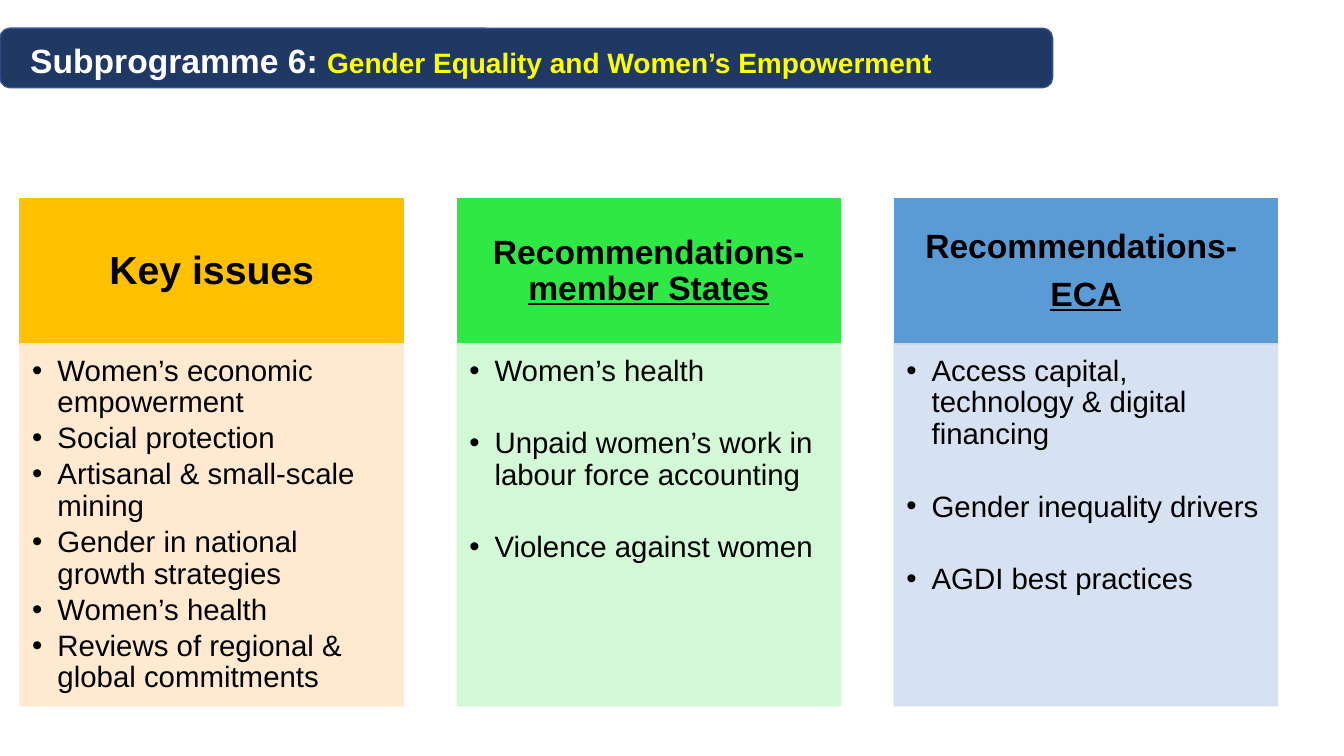
from pptx import Presentation
from pptx.dml.color import RGBColor
from pptx.enum.shapes import MSO_SHAPE
from pptx.enum.text import MSO_ANCHOR, MSO_AUTO_SIZE, PP_ALIGN
from pptx.oxml.ns import qn
from pptx.util import Inches, Pt
from lxml import etree

RECT = MSO_SHAPE.RECTANGLE
ROUND = MSO_SHAPE.ROUNDED_RECTANGLE
TOP, MIDDLE = MSO_ANCHOR.TOP, MSO_ANCHOR.MIDDLE
LEFT, CENTER = PP_ALIGN.LEFT, PP_ALIGN.CENTER
FIXED = MSO_AUTO_SIZE.NONE

COLORS = {
    "navy": "203864", "edge": "325491", "white": "FFFFFF",
    "yellow": "FFFF00", "black": "000000",
    "gold": "FFC000", "cream": "FFE8CC",
    "green": "30E845", "mint": "CFF8D1",
    "blue": "5B9BD5", "sky": "D2DFF0",
}

COLUMNS = [
    ("gold", "cream", 28, (0.22, 0.12), [[("Key issues", False)]], 3,
     ["Women’s economic empowerment", "Social protection",
      "Artisanal & small-scale mining",
      "Gender in national growth strategies", "Women’s health",
      "Reviews of regional & global commitments"]),
    ("green", "mint", 24, (0.19, 0.11),
     [[("Recommendations- ", False), ("member States", True)]], 29,
     ["Women’s health", "Unpaid women’s work in labour force accounting",
      "Violence against women"]),
    ("blue", "sky", 24, (0.19, 0.11),
     [[("Recommendations- ", False)], [("ECA", True)]], 29,
     ["Access capital, technology & digital financing",
      "Gender inequality drivers", "AGDI best practices"]),
]


def color(name):
    return RGBColor.from_string(COLORS[name])


def add_box(slide, kind, area, fill, line):
    box = slide.shapes.add_shape(kind, *map(Inches, area))
    box.shadow.inherit = False
    box.fill.solid()
    box.fill.fore_color.rgb = color(fill)
    box.line.color.rgb = color(line)
    box.line.width = Pt(1)
    return box


def set_frame(shape, pads, anchor):
    frame = shape.text_frame
    frame.word_wrap = True
    frame.auto_size = FIXED
    frame.vertical_anchor = anchor
    (frame.margin_left, frame.margin_top,
     frame.margin_right, frame.margin_bottom) = map(Inches, pads)
    return frame


def add_para(frame, index, align, after):
    para = frame.add_paragraph() if index else frame.paragraphs[0]
    para.alignment = align
    para.line_spacing = 0.9
    para.space_before = Pt(0)
    para.space_after = Pt(after)
    return para


def add_run(para, text, size, ink="black", bold=False, under=False):
    run = para.add_run()
    run.text = text
    font = run.font
    font.name = "Arial"
    font.size = Pt(size)
    font.bold = bold
    font.underline = under
    font.color.rgb = color(ink)


def add_bullet(para):
    props = para._p.get_or_add_pPr()
    props.set("marL", str(Inches(0.25)))
    props.set("indent", str(Inches(-0.25)))
    etree.SubElement(props, qn("a:buFont")).set("typeface", "Arial")
    etree.SubElement(props, qn("a:buChar")).set("char", "•")


def fade(shape, share):
    for tint in shape.element.spPr.iter(qn("a:srgbClr")):
        etree.SubElement(tint, qn("a:alpha")).set("val", str(share * 1000))


def add_title(slide):
    title = slide.shapes.title
    bar = add_box(slide, ROUND, (0, 0.28, 10.44, 0.59), "navy", "edge")
    title.element.addprevious(bar.element)
    title.left, title.top = Inches(0.2), Inches(0.35)
    title.width, title.height = Inches(10.29), Inches(0.5)
    frame = set_frame(title, (0.1, 0.05, 0.1, 0.05), TOP)
    para = frame.paragraphs[0]
    para.alignment = LEFT
    add_run(para, "Subprogramme 6: ", 24, "white", True)
    add_run(para, "Gender Equality and Women’s Empowerment", 20, "yellow", True)


def add_head(slide, left, fill, size, pads, lines):
    box = add_box(slide, RECT, (left, 1.97, 3.8, 1.45), fill, fill)
    frame = set_frame(box, pads * 2, MIDDLE)
    for index, runs in enumerate(lines):
        para = add_para(frame, index, CENTER, size * 0.35)
        for text, under in runs:
            add_run(para, text, size, bold=True, under=under)


def add_list(slide, left, fill, after, items):
    box = add_box(slide, RECT, (left, 3.41, 3.8, 3.59), fill, fill)
    fade(box, 90)
    frame = set_frame(box, (0.12, 0.12, 0.16, 0.18), TOP)
    for index, item in enumerate(items):
        para = add_para(frame, index, LEFT, after)
        add_bullet(para)
        add_run(para, item, 21)


def main():
    deck = Presentation()
    deck.slide_width, deck.slide_height = Inches(13.33), Inches(7.5)
    slide = deck.slides.add_slide(deck.slide_layouts[5])
    add_title(slide)
    for index, column in enumerate(COLUMNS):
        head, body, size, pads, lines, after, items = column
        left = 0.2 + index * 8.67 / 2
        add_head(slide, left, head, size, pads, lines)
        add_list(slide, left, body, after, items)
    deck.save("out.pptx")


if __name__ == "__main__":
    main()
